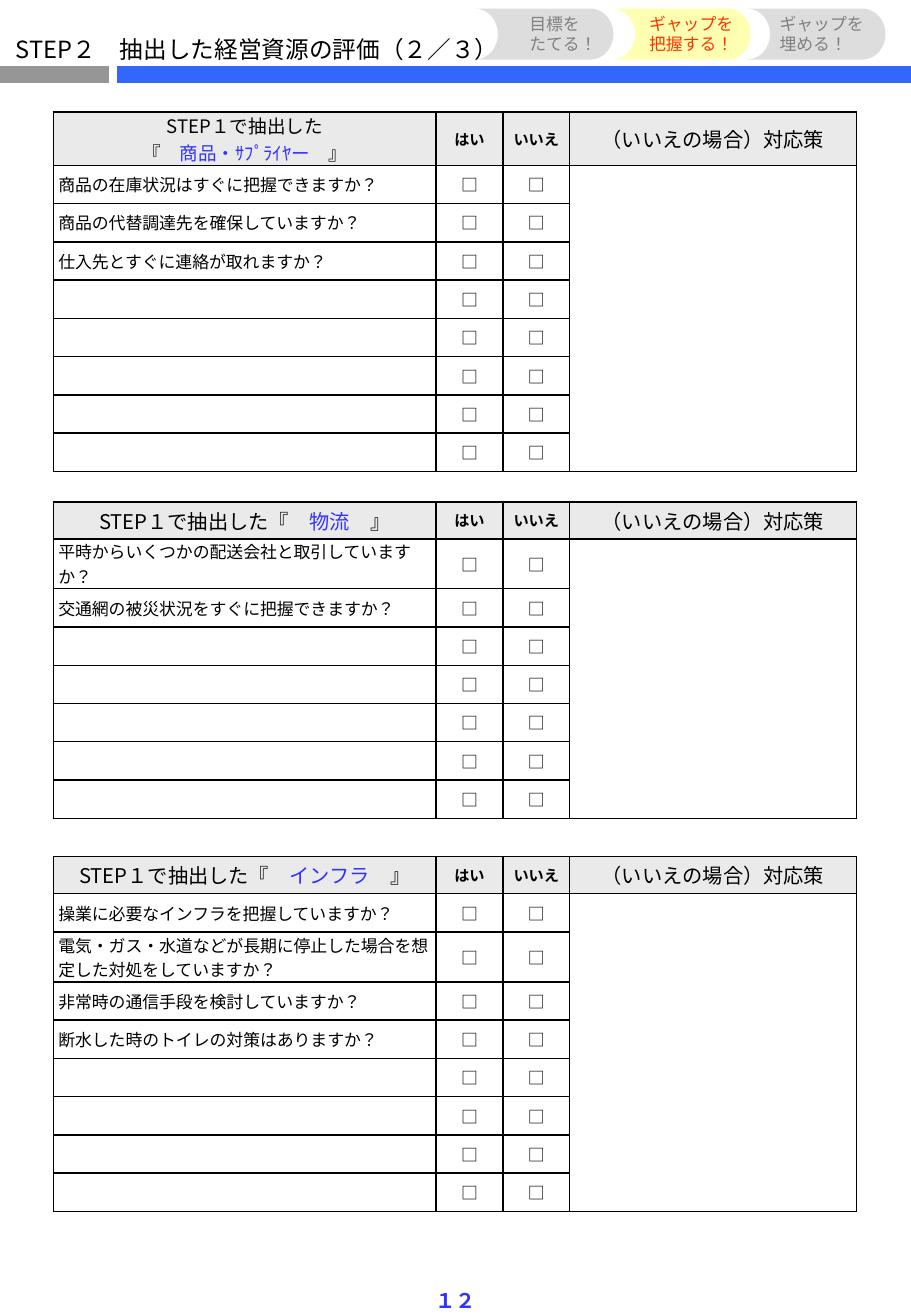
from lxml import etree
from pptx import Presentation
from pptx.dml.color import RGBColor
from pptx.enum import lang, shapes, text
from pptx.oxml.ns import qn
from pptx.util import Inches, Pt

FONT = "Noto Sans CJK JP"
BLACK = RGBColor(0x00, 0x00, 0x00)
GRAY = RGBColor(0x80, 0x80, 0x80)
RED = RGBColor(0xFF, 0x33, 0x00)
BLUE = RGBColor(0x33, 0x33, 0xFF)
BAR_GRAY = RGBColor(0x96, 0x96, 0x96)
BAR_BLUE = RGBColor(0x33, 0x66, 0xFF)
STEP_GRAY = RGBColor(0xDD, 0xDD, 0xDD)
STEP_YELLOW = RGBColor(0xFF, 0xFF, 0xB2)
HEADER_FILL = RGBColor(0xEA, 0xEA, 0xEA)

TITLE = "STEP２　抽出した経営資源の評価（２／３）"
PAGE_NUMBER = "１２"
LEFT, CENTER = text.PP_ALIGN.LEFT, text.PP_ALIGN.CENTER
# label lines, tab left, label left, label width, fill, text colour, alignment
STEPS = [
    (("目標を", "たてる！"), 3.91, 4.26, 0.76, STEP_GRAY, GRAY, LEFT),
    (("ギャップを", "把握する！"), 5.04, 5.24, 0.9, STEP_YELLOW, RED, CENTER),
    (("ギャップを", "埋める！"), 6.15, 6.32, 0.9, STEP_GRAY, GRAY, LEFT),
]
BARS = [(0, 0.9, BAR_GRAY), (0.96, 7.5, BAR_BLUE)]
ANSWERS = [("はい", 9, True), ("いいえ", 9, True), ("（いいえの場合）対応策", 12, False)]
# top, lead-in lines, subject, header size, questions, number of rows
CHECKLISTS = [
    (0.92, ("STEP１で抽出した", "『　"), "商品・ｻﾌﾟﾗｲﾔー　", 11,
     ["商品の在庫状況はすぐに把握できますか？",
      "商品の代替調達先を確保していますか？",
      "仕入先とすぐに連絡が取れますか？"], 8),
    (4.13, ("STEP１で抽出した『　",), "物流　", 12,
     ["平時からいくつかの配送会社と取引していますか？",
      "交通網の被災状況をすぐに把握できますか？"], 7),
    (7.05, ("STEP１で抽出した『　",), "インフラ　", 12,
     ["操業に必要なインフラを把握していますか？",
      "電気・ガス・水道などが長期に停止した場合を想定した対処をしていますか？",
      "非常時の通信手段を検討していますか？",
      "断水した時のトイレの対策はありますか？"], 8),
]
TABLE_LEFT = 0.44
COLUMNS = [3.15, 0.55, 0.55, 2.36]
ROW, WRAPPED_ROW = 0.315, 0.41
HEADER_ROW, TALL_HEADER_ROW = 0.305, 0.44
CHARS_PER_LINE = 22


def style(p, size, color=BLACK, bold=False, align=LEFT, before=0):
    """Format a paragraph as Japanese text whose punctuation stays inside."""
    p.alignment, p.space_before = align, Pt(before)
    p._p.get_or_add_pPr().set("hangingPunct", "0")
    f = p.font
    f.size, f.bold, f.name = Pt(size), bold, FONT
    if color is not None:
        f.color.rgb = color
    etree.SubElement(f._element, qn("a:ea")).set("typeface", FONT)
    for r in p.runs:
        r.font.language_id = lang.MSO_LANGUAGE_ID.JAPANESE


def add_label(slide, box, lines, size, color, bold=False, align=LEFT):
    tf = slide.shapes.add_textbox(*map(Inches, box)).text_frame
    tf.word_wrap = False
    tf.text = "\n".join(lines)
    for p in tf.paragraphs:
        style(p, size, color, bold, align)


def add_bar(slide, start, end, color):
    y = Inches(0.61)
    bar = slide.shapes.add_connector(
        shapes.MSO_CONNECTOR.STRAIGHT, Inches(start), y, Inches(end), y)
    bar.line.color.rgb, bar.line.width = color, Pt(10)
    etree.SubElement(bar._element.spPr, qn("a:effectLst"))


def add_step_tab(slide, left, fill):
    sp = slide.shapes.add_shape(
        shapes.MSO_SHAPE.FLOWCHART_STORED_DATA,
        *map(Inches, (left, 0.07, 1.14, 0.42)))
    sp._element.spPr.xfrm.set("flipH", "1")
    sp.shadow.inherit = False
    sp.fill.solid()
    sp.fill.fore_color.rgb = fill
    sp.line.fill.background()


def frame_cell(cell, header):
    """Set the margins, fill and black borders of a cell."""
    cell.margin_left = cell.margin_right = Inches(0.04)
    cell.margin_top = cell.margin_bottom = 0
    cell.vertical_anchor = text.MSO_ANCHOR.MIDDLE
    tc_pr = cell._tc.get_or_add_tcPr()
    for side in ("a:lnL", "a:lnR", "a:lnT", "a:lnB"):
        ln = etree.SubElement(tc_pr, qn(side), w=str(Pt(1)))
        fill = etree.SubElement(ln, qn("a:solidFill"))
        etree.SubElement(fill, qn("a:srgbClr"), val=str(BLACK))
    if header:
        cell.fill.solid()
        cell.fill.fore_color.rgb = HEADER_FILL
    else:
        cell.fill.background()


def write_cell(cell, words, size, bold=False, align=CENTER, before=2):
    p = cell.text_frame.paragraphs[0]
    if words:
        p.add_run().text = words
    else:
        etree.SubElement(p._p, qn("a:endParaRPr"), sz=str(size * 100))
    style(p, size, BLACK, bold, align, before)


def write_subject(cell, lead, subject, size):
    """Write the header of the question column, its subject in blue."""
    p = cell.text_frame.paragraphs[0]
    parts = [(line, BLACK) for line in lead] + [(subject, BLUE), ("』", BLACK)]
    for i, (words, color) in enumerate(parts):
        if 0 < i < len(lead):
            p.add_line_break()
        r = p.add_run()
        r.text, r.font.color.rgb = words, color
    style(p, size, None, align=CENTER, before=0 if len(lead) > 1 else 2)


def add_checklist(slide, top, lead, subject, size, questions, count):
    questions = questions + [""] * (count - len(questions))
    wrapped = [len(q) > CHARS_PER_LINE for q in questions]
    heights = [TALL_HEADER_ROW if len(lead) > 1 else HEADER_ROW]
    heights += [WRAPPED_ROW if w else ROW for w in wrapped]
    table = slide.shapes.add_table(
        count + 1, len(COLUMNS), *map(
            Inches, (TABLE_LEFT, top, sum(COLUMNS), sum(heights)))).table
    table.first_row = table.horz_banding = False
    for column, width in zip(table.columns, COLUMNS):
        column.width = Inches(width)
    for i, (row, height) in enumerate(zip(table.rows, heights)):
        row.height = Inches(height)
        for cell in row.cells:
            frame_cell(cell, header=i == 0)
    write_subject(table.cell(0, 0), lead, subject, size)
    for col, (words, points, bold) in enumerate(ANSWERS, 1):
        write_cell(table.cell(0, col), words, points, bold)
    for i, (question, wraps) in enumerate(zip(questions, wrapped), 1):
        write_cell(table.cell(i, 0), question, 10, align=LEFT, before=0 if wraps else 2)
        for col in (1, 2):
            write_cell(table.cell(i, col), "□", 10)
        write_cell(table.cell(i, 3), "", 10)
    table.cell(1, 3).merge(table.cell(count, 3))


def main():
    prs = Presentation()
    prs.slide_width, prs.slide_height = Inches(7.5), Inches(10.83)
    slide = prs.slides.add_slide(prs.slide_layouts[5])
    title = slide.shapes.title
    title.left, title.top, title.width, title.height = map(
        Inches, (0.03, 0.23, 4.49, 0.34))
    tf = title.text_frame
    tf.text, tf.vertical_anchor = TITLE, text.MSO_ANCHOR.MIDDLE
    tf.auto_size = text.MSO_AUTO_SIZE.NONE
    style(tf.paragraphs[0], 14)
    for bar in BARS:
        add_bar(slide, *bar)
    for _, left, _, _, fill, _, _ in reversed(STEPS):
        add_step_tab(slide, left, fill)
    for lines, _, left, width, _, color, align in STEPS:
        add_label(slide, (left, 0.06, width, 0.44), lines, 10, color, align=align)
    for checklist in CHECKLISTS:
        add_checklist(slide, *checklist)
    add_label(slide, (3.48, 10.55, 0.54, 0.31), [PAGE_NUMBER], 12, BLUE, True, CENTER)
    prs.save("out.pptx")


if __name__ == "__main__":
    main()
